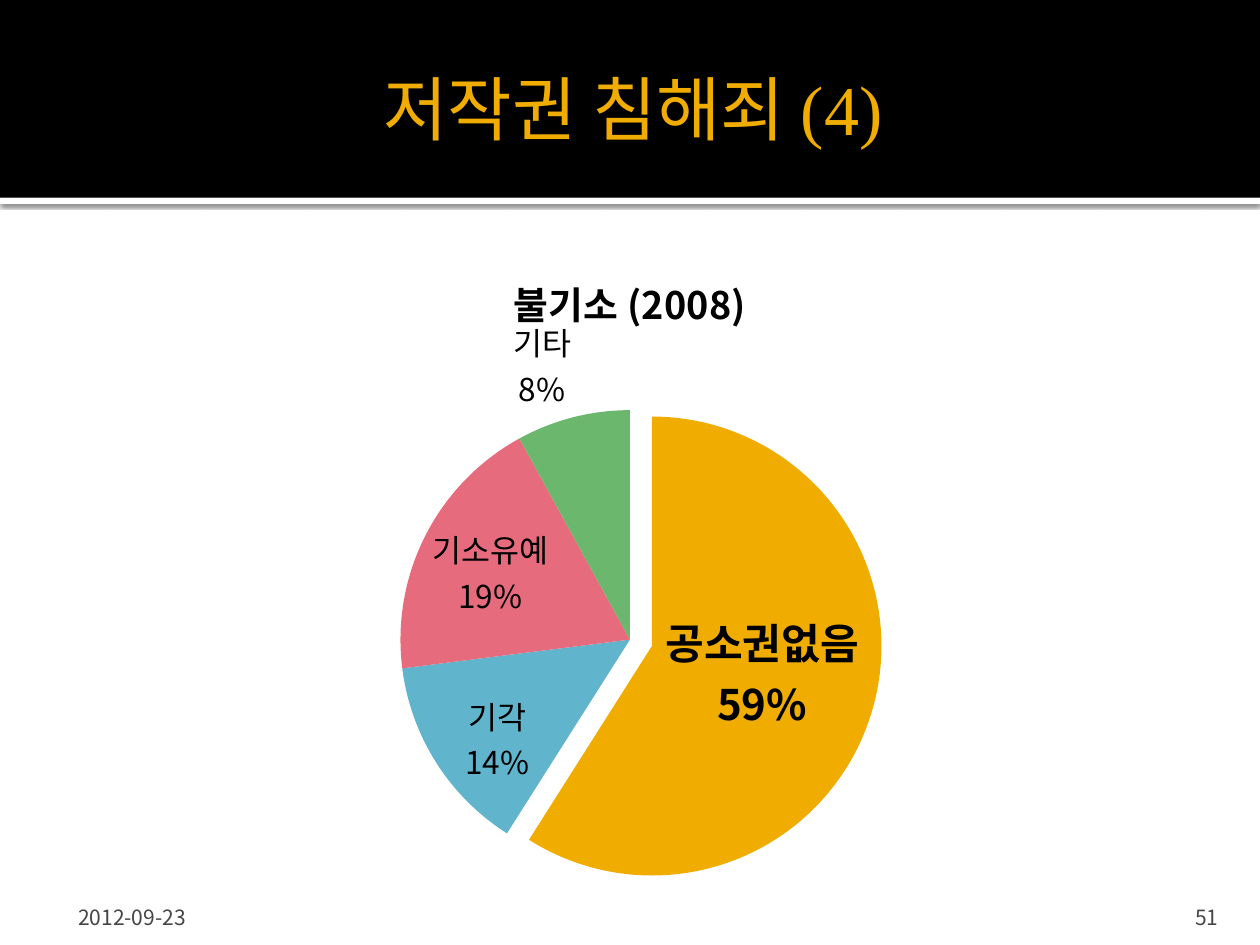
from dataclasses import dataclass
from typing import Any

from lxml import etree
from pptx import Presentation
from pptx import util as u
from pptx.chart import data as chart_data
from pptx.dml.color import RGBColor
from pptx.enum import chart as charts, shapes, text
from pptx.oxml import ns, parse_xml


@dataclass(frozen=True)
class Theme:
    black: str = "000000"
    white: str = "FFFFFF"
    gold: str = "F0AD00"
    blue: str = "60B5CC"
    pink: str = "E66C7D"
    green: str = "6BB76D"
    grey: str = "454545"
    sans: str = "Noto Sans CJK KR"
    serif: str = "Times New Roman"
    heading: float = 40
    chart_heading: float = 21.6
    emphasis: float = 24
    label: float = 18
    footer: float = 12


THEME = Theme()


@dataclass(frozen=True)
class Box:
    left: float
    top: float
    width: float
    height: float

    def lengths(self) -> list[u.Pt]:
        return [u.Pt(v) for v in (self.left, self.top, self.width, self.height)]


@dataclass(frozen=True)
class Caption:
    words: str
    box: Box
    font: dict[str, Any]
    color: str
    align: text.PP_ALIGN
    anchor: text.MSO_ANCHOR
    insets: tuple[float, float, float, float]


@dataclass(frozen=True)
class Slice:
    category: str
    share: int
    color: str
    place: charts.XL_LABEL_POSITION
    shift: tuple[float, float] = (0, 0)
    size: float = THEME.label
    bold: bool = False
    explosion: int = 0


FOOTER_FONT = {"name": THEME.sans, "size": u.Pt(THEME.footer)}
CAPTIONS = [
    Caption("저작권 침해죄 (4)", Box(36, 12.24, 648, 98.64),
            {"name": THEME.serif, "size": u.Pt(THEME.heading)}, THEME.gold,
            text.PP_ALIGN.CENTER, text.MSO_ANCHOR.MIDDLE, (7.2, 3.6, 3.6, 3.6)),
    Caption("2012-09-23", Box(36, 509.76, 168, 21.6), FOOTER_FONT, THEME.grey,
            text.PP_ALIGN.LEFT, text.MSO_ANCHOR.BOTTOM, (8.64, 3.6, 3.6, 0)),
    Caption("51", Box(645.84, 509.76, 57.6, 21.6), FOOTER_FONT, THEME.grey,
            text.PP_ALIGN.RIGHT, text.MSO_ANCHOR.BOTTOM, (7.2, 3.6, 7.2, 0)),
]
PLACE = charts.XL_LABEL_POSITION
SLICES = [
    Slice("공소권없음", 59, THEME.gold, PLACE.CENTER, (0, -0.01), THEME.emphasis, True, 10),
    Slice("기각", 14, THEME.blue, PLACE.INSIDE_END, (0.02, 0.04)),
    Slice("기소유예", 19, THEME.pink, PLACE.INSIDE_END, (0, -0.02)),
    Slice("기타", 8, THEME.green, PLACE.OUTSIDE_END),
]


def apply(target: Any, values: dict[str, Any]) -> None:
    for key, value in values.items():
        setattr(target, key, value)


def style_font(font: Any, values: dict[str, Any], color: str) -> None:
    apply(font, values)
    font.color.rgb = RGBColor.from_string(color)


def draw_band(slide: Any, box: Box, color: str) -> Any:
    band = slide.shapes.add_shape(shapes.MSO_SHAPE.RECTANGLE, *box.lengths())
    band.shadow.inherit = False
    band.fill.solid()
    band.fill.fore_color.rgb = RGBColor.from_string(color)
    band.line.fill.background()
    return band


def cast_shadow(band: Any, color: str) -> None:
    effects = band._element.spPr.find(ns.qn("a:effectLst"))
    effects.append(parse_xml(
        f'<a:outerShdw {ns.nsdecls("a")} blurRad="{u.Pt(2.5)}" dist="{u.Pt(0.8)}" dir="5400000">'
        f'<a:srgbClr val="{color}"><a:alpha val="60000"/></a:srgbClr></a:outerShdw>'))


def draw_caption(slide: Any, caption: Caption) -> None:
    frame = slide.shapes.add_textbox(*caption.box.lengths()).text_frame
    left, top, right, bottom = (u.Pt(v) for v in caption.insets)
    apply(frame, {"word_wrap": True, "vertical_anchor": caption.anchor,
                  "margin_left": left, "margin_top": top,
                  "margin_right": right, "margin_bottom": bottom})
    paragraph = frame.paragraphs[0]
    paragraph.alignment = caption.align
    run = paragraph.add_run()
    run.text = caption.words
    style_font(run.font, caption.font, caption.color)


def manual_layout(settings: dict[str, Any]) -> Any:
    entries = "".join(f'<c:{key} val="{value}"/>' for key, value in settings.items())
    return parse_xml(f'<c:layout {ns.nsdecls("c")}><c:manualLayout>{entries}'
                     '</c:manualLayout></c:layout>')


def place_plot(chart: Any, settings: dict[str, Any]) -> None:
    plot_area = chart._chartSpace.chart.plotArea
    for old in plot_area.findall(ns.qn("c:layout")):
        plot_area.remove(old)
    plot_area.insert(0, manual_layout(settings))


def finish_label(label: Any, shift: tuple[float, float]) -> None:
    flags = {"c:showVal": "0", "c:showCatName": "1", "c:showPercent": "1"}
    for tag, value in flags.items():
        label.find(ns.qn(tag)).set("val", value)
    etree.SubElement(label, ns.qn("c:separator")).text = "\n"
    if any(shift):
        label.find(ns.qn("c:idx")).addnext(manual_layout(dict(zip("xy", shift))))


def draw_slice(series: Any, index: int, part: Slice) -> None:
    point = series.points[index]
    point.format.fill.solid()
    point.format.fill.fore_color.rgb = RGBColor.from_string(part.color)
    point.format.line.fill.background()
    if part.explosion:
        wedge = series._element.xpath(f"c:dPt[c:idx/@val={index}]")[0]
        wedge.find(ns.qn("c:spPr")).addprevious(
            parse_xml(f'<c:explosion {ns.nsdecls("c")} val="{part.explosion}"/>'))
    label = point.data_label
    style_font(label.font, {"name": THEME.sans, "size": u.Pt(part.size), "bold": part.bold},
               THEME.black)
    label.position = part.place
    finish_label(series._element.xpath(f"c:dLbls/c:dLbl[c:idx/@val={index}]")[0], part.shift)


def draw_pie(slide: Any, box: Box, heading: str, slices: list[Slice]) -> None:
    shares = chart_data.CategoryChartData()
    shares.categories = [part.category for part in slices]
    shares.add_series(heading, [part.share for part in slices])
    chart = slide.shapes.add_chart(charts.XL_CHART_TYPE.PIE, *box.lengths(), shares).chart
    apply(chart, {"has_legend": False, "has_title": True})
    style_font(chart.font, {"name": THEME.sans, "size": u.Pt(THEME.label)}, THEME.black)
    title = chart.chart_title.text_frame
    title.text = heading
    style_font(title.paragraphs[0].runs[0].font,
               {"name": THEME.sans, "size": u.Pt(THEME.chart_heading), "bold": True}, THEME.black)
    plot = chart.plots[0]
    plot.vary_by_categories = True
    for index, part in enumerate(slices):
        draw_slice(plot.series[0], index, part)
    place_plot(chart, {"layoutTarget": "inner", "xMode": "edge", "yMode": "edge",
                       "x": 0.08, "y": 0.26, "w": 0.84, "h": 0.72})


def main() -> None:
    deck = Presentation()
    apply(deck, {"slide_width": u.Pt(720), "slide_height": u.Pt(540)})
    slide = deck.slides.add_slide(deck.slide_layouts[6])
    cast_shadow(draw_band(slide, Box(0, 113, 720, 3.6), THEME.white), THEME.black)
    draw_band(slide, Box(0, 0, 720, 113), THEME.black)
    for caption in CAPTIONS:
        draw_caption(slide, caption)
    draw_pie(slide, Box(36, 139.68, 648, 364.32), "불기소 (2008)", SLICES)
    deck.save("out.pptx")


if __name__ == "__main__":
    main()
